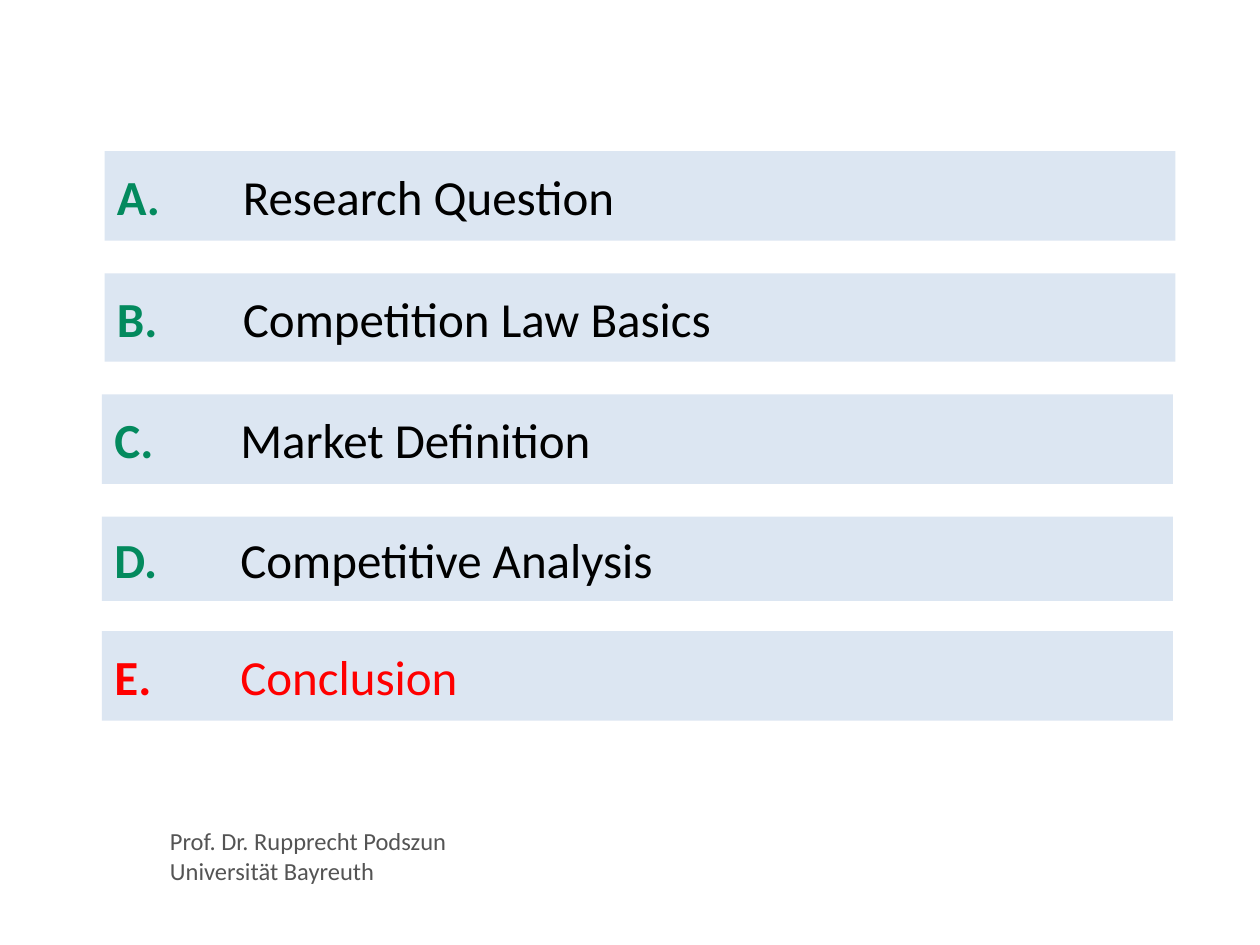
import lxml.etree
import pptx
import pptx.dml.color
import pptx.enum.shapes
import pptx.enum.text
import pptx.oxml.ns
import pptx.util

Inches = pptx.util.Inches
Pt = pptx.util.Pt
qn = pptx.oxml.ns.qn

FONT = "Calibri"
BAR, GREEN, RED, BLACK, GREY = "DCE6F2", "038A5E", "FF0000", "000000", "545454"


def color(hex_text):
    return pptx.dml.color.RGBColor.from_string(hex_text)


class AgendaSlide:
    """Holds the style and the current slide."""

    def __init__(self, deck):
        self.page = deck.slides.add_slide(deck.slide_layouts[6])

    def style(self, font, size, hex_text, bold=False):
        font.name = FONT
        font.size = Pt(size)
        font.bold = bold
        font.color.rgb = color(hex_text)

    def tab_stop(self, para, position):
        tabs = lxml.etree.SubElement(para._p.get_or_add_pPr(), qn("a:tabLst"))
        lxml.etree.SubElement(tabs, qn("a:tab"), pos=str(Inches(position)), algn="l")

    def footer(self, left, top, width, height, lines):
        box = self.page.shapes.add_textbox(
            Inches(left), Inches(top), Inches(width), Inches(height))
        frame = box.text_frame
        frame.word_wrap = True
        frame.text = "\n".join(lines)
        for para in frame.paragraphs:
            self.style(para.font, 14, GREY)

    def agenda_bar(self, left, top, height, letter, title, letter_color, title_color):
        bar = self.page.shapes.add_shape(
            pptx.enum.shapes.MSO_SHAPE.RECTANGLE,
            Inches(left), Inches(top), Inches(8.5), Inches(height))
        bar.shadow.inherit = False
        bar.fill.solid()
        bar.fill.fore_color.rgb = color(BAR)
        bar.line.fill.background()
        frame = bar.text_frame
        frame.word_wrap = True
        frame.vertical_anchor = pptx.enum.text.MSO_ANCHOR.MIDDLE
        para = frame.paragraphs[0]
        para.alignment = pptx.enum.text.PP_ALIGN.LEFT
        self.tab_stop(para, 1)
        for text, hex_text, bold in ((f"{letter}. \t", letter_color, True),
                                     (title, title_color, False)):
            span = para.add_run()
            span.text = text
            self.style(span.font, 28, hex_text, bold)


def main():
    deck = pptx.Presentation()
    deck.slide_width, deck.slide_height = Inches(10), Inches(7.5)
    slide = AgendaSlide(deck)

    # Footer with the speaker
    slide.footer(1.25, 6.51, 8.19, 0.57,
                 ["Prof. Dr. Rupprecht Podszun", "Universität Bayreuth"])

    # Agenda, with the current section in red
    sections = [
        (0.83, 1.2, 0.71, "A", "Research Question"),
        (0.83, 2.17, 0.7, "B", "Competition Law Basics"),
        (0.81, 3.13, 0.71, "C", "Market Definition"),
        (0.81, 4.1, 0.67, "D", "Competitive Analysis"),
        (0.81, 5.01, 0.71, "E", "Conclusion"),
    ]
    current = "E"
    for left, top, height, letter, title in sections:
        colors = (RED, RED) if letter == current else (GREEN, BLACK)
        slide.agenda_bar(left, top, height, letter, title, *colors)

    deck.save("out.pptx")


if __name__ == "__main__":
    main()
